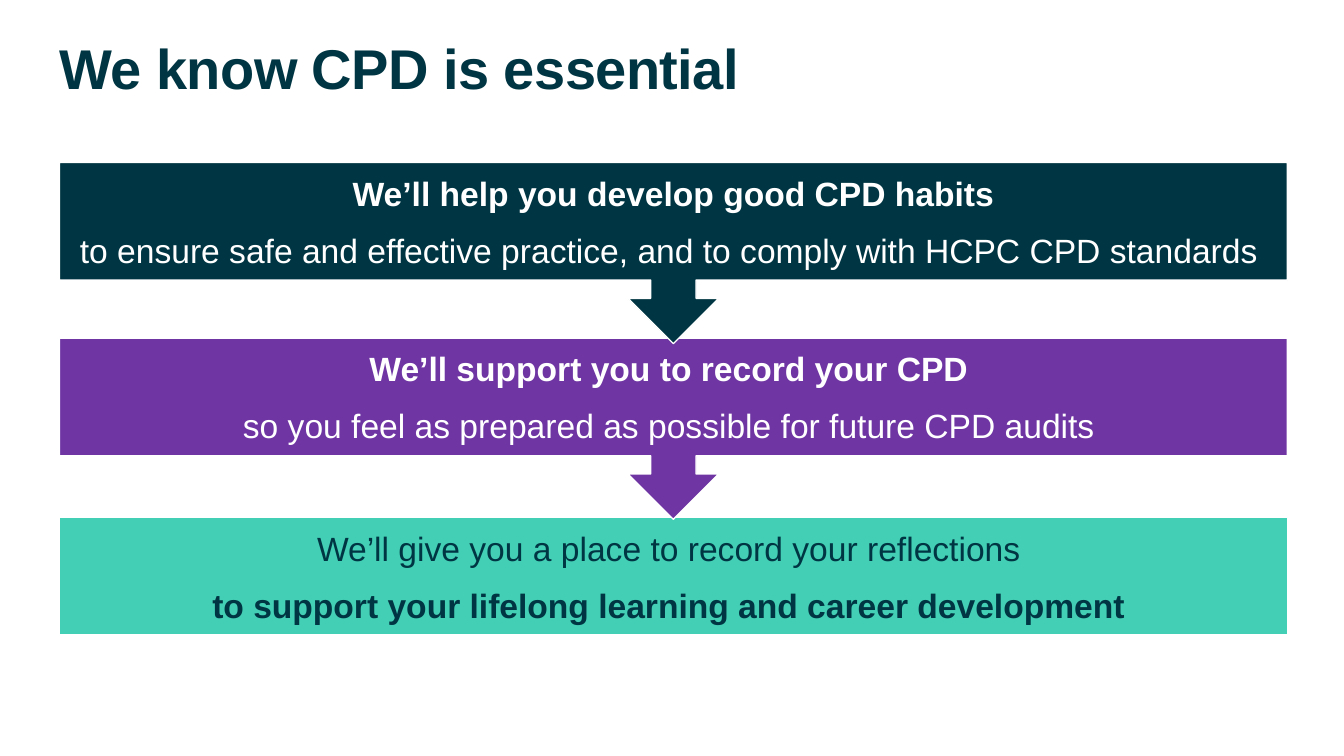
from pptx import Presentation
from pptx.dml.color import RGBColor
from pptx.enum.shapes import MSO_SHAPE
from pptx.enum.text import MSO_ANCHOR, MSO_AUTO_SIZE, PP_ALIGN
from pptx.util import Pt

NAVY, PURPLE, TEAL, WHITE = "003643", "6E35A3", "43CFB5", "FFFFFF"
LEFT, WIDTH = 42.5, 877


def paint(color, hue):
    color.rgb = RGBColor.from_string(hue)


def write(para, text, size, hue, bold):
    run = para.add_run()
    run.text = text
    run.font.name = "Arial"
    run.font.size = Pt(size)
    run.font.bold = bold
    paint(run.font.color, hue)
    return run


deck = Presentation()
deck.slide_width, deck.slide_height = Pt(960), Pt(540)
slide = deck.slides.add_slide(deck.slide_layouts[5])

title = slide.shapes.title
title.left, title.top = Pt(LEFT), Pt(29.5)
title.width, title.height = Pt(WIDTH), Pt(57)
frame = title.text_frame
frame.auto_size = MSO_AUTO_SIZE.NONE
frame.vertical_anchor = MSO_ANCHOR.TOP
frame.margin_left = frame.margin_top = frame.margin_right = frame.margin_bottom = 0
para = frame.paragraphs[0]
para.alignment = PP_ALIGN.LEFT
para.line_spacing = 0.9
run = write(para, "We know CPD is essential", 40, NAVY, True)
run._r.get_or_add_rPr().set("spc", "-40")

# Each step: shape, top, height, fill, text colour, lines as (text, bold).
# Listed from the bottom up, so that each arrow lies over the next box.
steps = [
    (MSO_SHAPE.RECTANGLE, 369.5, 84.2, TEAL, NAVY, [
        ("We’ll give you a place to record your reflections ", False),
        ("to support your lifelong learning and career development ", True)]),
    (MSO_SHAPE.DOWN_ARROW_CALLOUT, 241.5, 129.5, PURPLE, WHITE, [
        ("We’ll support you to record your CPD ", True),
        ("so you feel as prepared as possible for future CPD audits ", False)]),
    (MSO_SHAPE.DOWN_ARROW_CALLOUT, 116, 129.5, NAVY, WHITE, [
        ("We’ll help you develop good CPD habits", True),
        ("to ensure safe and effective practice, and to comply with HCPC CPD standards ", False)]),
]

for kind, top, height, fill, ink, lines in steps:
    step = slide.shapes.add_shape(kind, Pt(LEFT), Pt(top), Pt(WIDTH), Pt(height))
    step.shadow.inherit = False
    step.fill.solid()
    paint(step.fill.fore_color, fill)
    paint(step.line.color, WHITE)
    step.line.width = Pt(1)
    frame = step.text_frame
    frame.word_wrap = True
    frame.vertical_anchor = MSO_ANCHOR.MIDDLE
    frame.margin_left = frame.margin_right = Pt(13.5)
    frame.margin_top = frame.margin_bottom = Pt(13.5)
    for i, (text, bold) in enumerate(lines):
        para = frame.add_paragraph() if i else frame.paragraphs[0]
        para.alignment = PP_ALIGN.CENTER
        para.space_after = Pt(12)
        write(para, text, 24, ink, bold)

deck.save("out.pptx")
